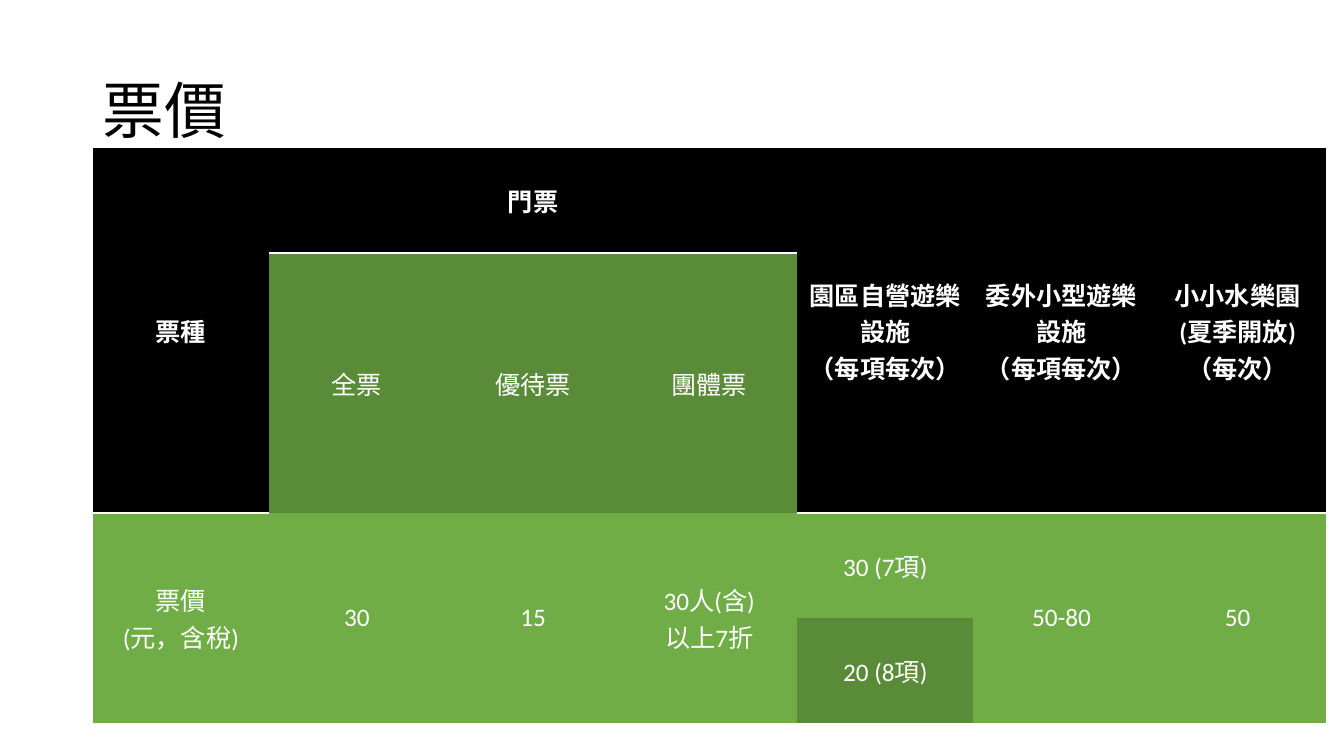
"""Build the ticket price slide with its merged price table."""
import pptx
import pptx.dml.color
import pptx.enum.text
import pptx.oxml
import pptx.oxml.ns
import pptx.util

Inches = pptx.util.Inches
Pt = pptx.util.Pt
RGBColor = pptx.dml.color.RGBColor
BLACK = RGBColor(0x00, 0x00, 0x00)
WHITE = RGBColor(0xFF, 0xFF, 0xFF)
GREEN = RGBColor(0x70, 0xAD, 0x47)
DARK_GREEN = RGBColor(0x5A, 0x8B, 0x39)
FONT = "Calibri"
NO_STYLE = "{2D5ABB26-0587-4C30-8999-92F81FD0307C}"

TITLE = "票價"
COLUMN_COUNT = 7
COLUMN_WIDTH = 12.23 / COLUMN_COUNT
ROW_HEIGHTS = [1.04, 2.58, 1.04, 1.04]
# Each entry: row, column, rows spanned, columns spanned, text
HEADERS = [
    (0, 0, 2, 1, "票種"),
    (0, 1, 1, 3, "門票"),
    (0, 4, 2, 1, "園區自營遊樂設施\v（每項每次）"),
    (0, 5, 2, 1, "委外小型遊樂設施\v（每項每次）"),
    (0, 6, 2, 1, "小小水樂園\v(夏季開放)\v（每次）"),
]
PRICES = [
    (2, 0, 2, 1, "票價\v(元，含稅)"),
    (2, 1, 2, 1, "30"),
    (2, 2, 2, 1, "15"),
    (2, 3, 2, 1, "30人(含)\v以上7折"),
    (2, 4, 1, 1, "30 (7項)"),
    (2, 5, 2, 1, "50-80"),
    (2, 6, 2, 1, "50"),
]
DARK_CELLS = [
    (1, 1, 1, 1, "全票"),
    (1, 2, 1, 1, "優待票"),
    (1, 3, 1, 1, "團體票"),
    (3, 4, 1, 1, "20 (8項)"),
]


def style_spans(paragraph, size, color, bold=False):
    for span in paragraph.runs:
        span.font.name = FONT
        span.font.size = Pt(size)
        span.font.bold = bold
        span.font.color.rgb = color


def add_bottom_border(cell):
    line = pptx.oxml.parse_xml(
        f'<a:lnB {pptx.oxml.ns.nsdecls("a")} w="{Pt(2)}">'
        f'<a:solidFill><a:srgbClr val="{WHITE}"/></a:solidFill></a:lnB>'
    )
    cell._tc.get_or_add_tcPr().insert(0, line)


def fill_cells(table, entries, color, header=False):
    for row, column, row_span, column_span, text in entries:
        cell = table.cell(row, column)
        last_row = row + row_span - 1
        last_column = column + column_span - 1
        if row_span * column_span > 1:
            cell.merge(table.cell(last_row, last_column))
        cell.text_frame.text = text
        cell.vertical_anchor = pptx.enum.text.MSO_ANCHOR.MIDDLE
        cell.margin_left = cell.margin_right = Inches(0.03)
        cell.margin_top = cell.margin_bottom = Inches(0.03)
        paragraph = cell.text_frame.paragraphs[0]
        paragraph.alignment = pptx.enum.text.PP_ALIGN.CENTER
        style_spans(paragraph, 18, WHITE, header)
        for r in range(row, last_row + 1):
            for c in range(column, last_column + 1):
                part = table.cell(r, c)
                part.fill.solid()
                part.fill.fore_color.rgb = color
                if header and r == last_row:
                    add_bottom_border(part)
        if header and row_span > 1:
            add_bottom_border(cell)


def add_title(page):
    box = page.shapes.add_textbox(Inches(0.92), Inches(0.4), Inches(11.5), Inches(1.45))
    frame = box.text_frame
    frame.word_wrap = True
    frame.vertical_anchor = pptx.enum.text.MSO_ANCHOR.MIDDLE
    frame.text = TITLE
    frame.paragraphs[0].line_spacing = 0.9
    style_spans(frame.paragraphs[0], 44, BLACK)


def add_price_table(page):
    table = page.shapes.add_table(
        len(ROW_HEIGHTS), COLUMN_COUNT, Inches(0.92), Inches(1.47),
        Inches(COLUMN_WIDTH * COLUMN_COUNT), Inches(sum(ROW_HEIGHTS)),
    ).table
    table._tbl.tblPr.find(pptx.oxml.ns.qn("a:tableStyleId")).text = NO_STYLE
    table.first_row = table.horz_banding = False
    for column in table.columns:
        column.width = Inches(COLUMN_WIDTH)
    for row, height in zip(table.rows, ROW_HEIGHTS):
        row.height = Inches(height)
    fill_cells(table, HEADERS, BLACK, header=True)
    fill_cells(table, PRICES, GREEN)
    fill_cells(table, DARK_CELLS, DARK_GREEN)


def main():
    deck = pptx.Presentation()
    deck.slide_width = Inches(13.33)
    deck.slide_height = Inches(7.5)
    page = deck.slides.add_slide(deck.slide_layouts[6])
    add_title(page)
    add_price_table(page)
    deck.save("out.pptx")


if __name__ == "__main__":
    main()
